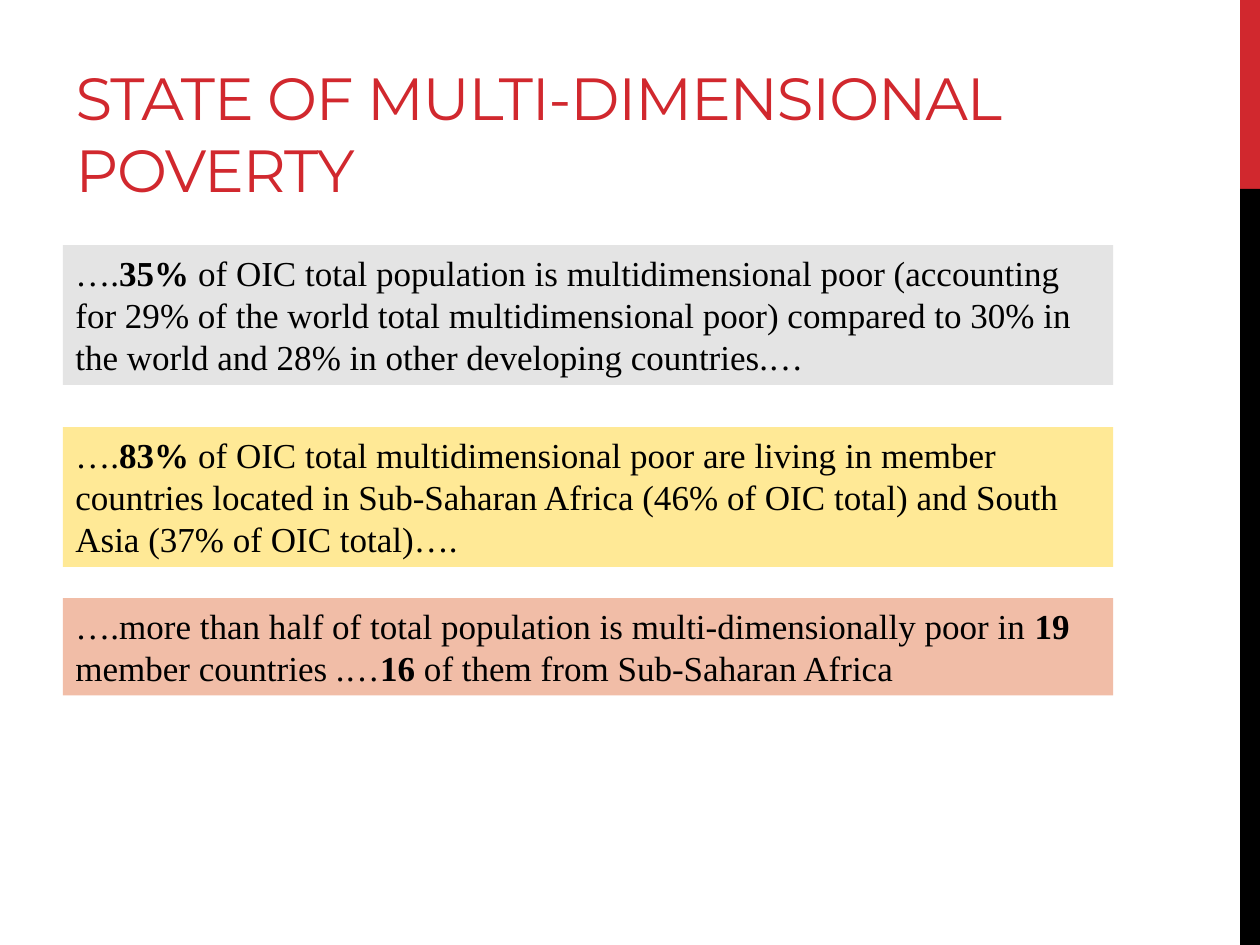
from pptx import Presentation
from pptx.dml.color import RGBColor
from pptx.enum.shapes import MSO_SHAPE
from pptx.enum.text import MSO_ANCHOR, MSO_AUTO_SIZE, PP_ALIGN
from pptx.util import Cm, Pt

RECTANGLE = MSO_SHAPE.RECTANGLE
BOTTOM, TOP = MSO_ANCHOR.BOTTOM, MSO_ANCHOR.TOP
NO_FIT = MSO_AUTO_SIZE.NONE
LEFT = PP_ALIGN.LEFT

COLOURS = {
    "red": "D1282E",
    "black": "000000",
    "grey": "E4E4E4",
    "yellow": "FFE996",
    "salmon": "F1BDA7",
}
PAGE_WIDTH, PAGE_HEIGHT = 25.4, 19.05
MARGIN, CONTENT_WIDTH = 1.27, 21.17
BAR_LEFT, RED_HEIGHT = 25.0, 3.81

FINDINGS = [
    (4.94, 2.82, "grey", [
        ("….", False),
        ("35%", True),
        (" of OIC total population is multidimensional poor (accounting for 29% of "
         "the world total multidimensional poor) compared to 30% in the world and "
         "28% in other developing countries.…", False),
    ]),
    (8.61, 2.82, "yellow", [
        ("….", False),
        ("83%", True),
        (" of OIC total multidimensional poor are living in member countries located "
         "in Sub-Saharan Africa (46% of OIC total) and South Asia (37% of OIC "
         "total)….", False),
    ]),
    (12.06, 1.96, "salmon", [
        ("….more than half of total population is multi-dimensionally poor in ", False),
        ("19", True),
        (" member countries .…", False),
        ("16", True),
        (" of them from Sub-Saharan Africa", False),
    ]),
]


class SlideBuilder:
    title_font, title_size = "Montserrat", 34
    body_font, body_size = "Times New Roman", 20

    def __init__(self, page):
        self.page = page

    def colour(self, name):
        return RGBColor.from_string(COLOURS[name])

    def span(self, para, text, font, size, colour, bold=False):
        span = para.add_run()
        span.text = text
        span.font.name = font
        span.font.size = Pt(size)
        span.font.bold = bold
        span.font.color.rgb = self.colour(colour)
        return span

    def frame(self, shape, anchor):
        frame = shape.text_frame
        frame.word_wrap = True
        frame.auto_size = NO_FIT
        frame.vertical_anchor = anchor
        para = frame.paragraphs[0]
        para.alignment = LEFT
        return para

    def title(self, text, left, top, width, height):
        title = self.page.shapes.title
        title.left, title.top = Cm(left), Cm(top)
        title.width, title.height = Cm(width), Cm(height)
        para = self.frame(title, BOTTOM)
        span = self.span(para, text, self.title_font, self.title_size, "red")
        span.font._element.set("spc", "-60")

    def block(self, left, top, width, height, fill):
        box = self.page.shapes.add_shape(
            RECTANGLE, Cm(left), Cm(top), Cm(width), Cm(height))
        box.shadow.inherit = False
        box.fill.solid()
        box.fill.fore_color.rgb = self.colour(fill)
        box.line.fill.background()
        return box

    def finding(self, top, height, fill, spans):
        box = self.block(MARGIN, top, CONTENT_WIDTH, height, fill)
        para = self.frame(box, TOP)
        for text, bold in spans:
            self.span(para, text, self.body_font, self.body_size, "black", bold)


def main():
    deck = Presentation()
    deck.slide_width, deck.slide_height = Cm(PAGE_WIDTH), Cm(PAGE_HEIGHT)
    builder = SlideBuilder(deck.slides.add_slide(deck.slide_layouts[5]))

    bar_width = PAGE_WIDTH - BAR_LEFT
    builder.block(BAR_LEFT, 0, bar_width, RED_HEIGHT, "red")
    builder.block(BAR_LEFT, RED_HEIGHT, bar_width, PAGE_HEIGHT - RED_HEIGHT, "black")
    builder.title("STATE OF MULTI-DIMENSIONAL POVERTY", MARGIN, 0.43, CONTENT_WIDTH, 3.81)
    for finding in FINDINGS:
        builder.finding(*finding)

    deck.save("out.pptx")


if __name__ == "__main__":
    main()
